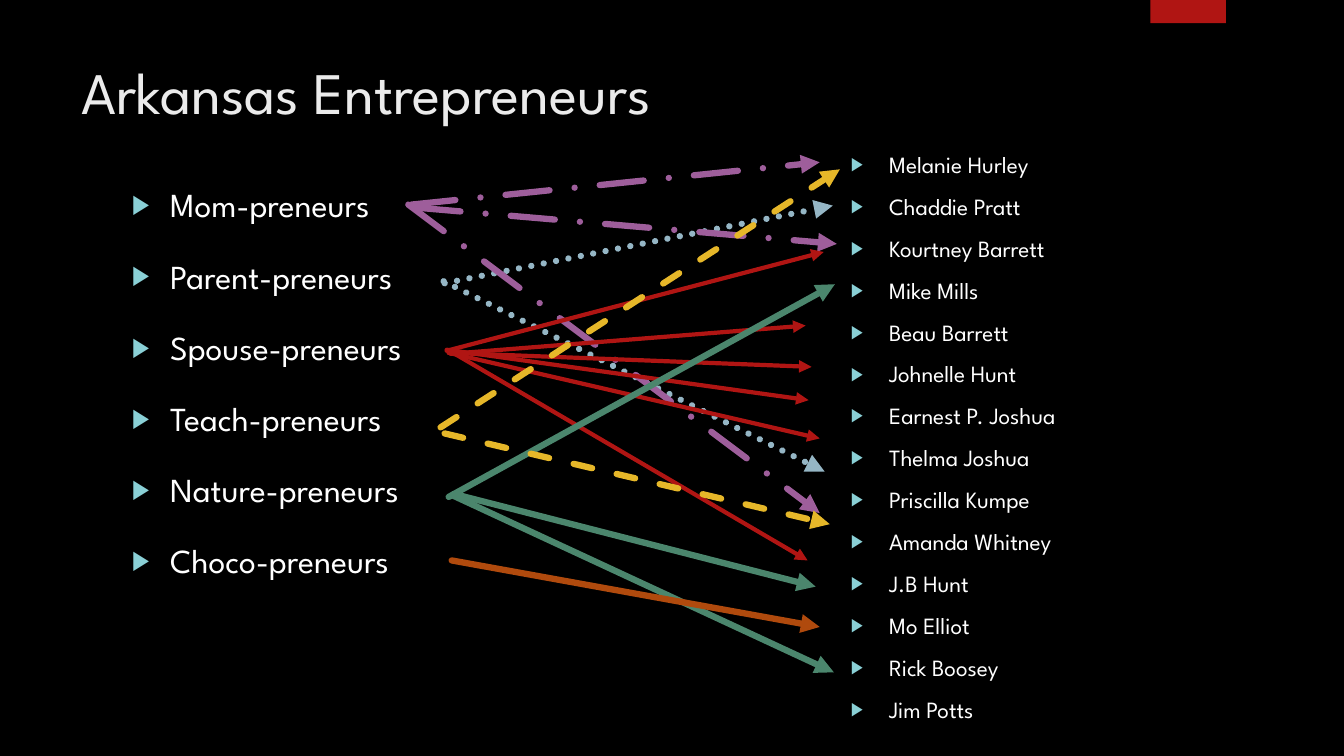
from lxml.etree import SubElement
from pptx import Presentation
from pptx.dml.color import RGBColor
from pptx.enum.dml import MSO_LINE
from pptx.enum.shapes import MSO_CONNECTOR, MSO_SHAPE
from pptx.oxml.ns import qn
from pptx.util import Inches, Pt

TITLE = "Arkansas Entrepreneurs"
KINDS = ["Mom-preneurs", "Parent-preneurs", "Spouse-preneurs",
         "Teach-preneurs", "Nature-preneurs", "Choco-preneurs"]
PEOPLE = ["Melanie Hurley", "Chaddie Pratt", "Kourtney Barrett", "Mike Mills",
          "Beau Barrett", "Johnelle Hunt", "Earnest P. Joshua",
          "Thelma Joshua", "Priscilla Kumpe", "Amanda Whitney", "J.B Hunt",
          "Mo Elliot", "Rick Boosey", "Jim Potts"]

THEME = {
    "font": "League Spartan", "back": "000000", "tab": "B01513",
    "title": "EBEBEB", "text": "FFFFFF", "bullet": "8AD0D6",
    "title_size": 42, "kind_size": 24, "name_size": 16.6,
    # colour, width, dash
    "parent": ("95B6C5", 4.5, MSO_LINE.ROUND_DOT),
    "mom": ("9E5E9B", 4.5, MSO_LINE.LONG_DASH_DOT),
    "spouse": ("B01513", 3, None),
    "nature": ("4B866D", 4.5, None),
    "choco": ("B04A0D", 4.5, None),
    "teach": ("E6B729", 4.5, MSO_LINE.DASH),
}

# Each arrow: start x, start y, end x, end y
ARROWS = {
    "parent": [(4.4, 2.79, 8.18, 4.68), (4.41, 2.81, 8.26, 2.04)],
    "mom": [(4.08, 2.03, 8.13, 1.61), (4.05, 2.03, 8.13, 5.09),
            (4.13, 2.06, 8.3, 2.42)],
    "spouse": [(4.43, 3.48, 8.17, 2.5), (4.47, 3.51, 7.99, 3.23),
               (4.45, 3.5, 8.05, 3.64), (4.51, 3.51, 8.01, 5.56),
               (4.45, 3.5, 8.13, 4.35), (4.43, 3.47, 8.02, 3.97)],
    "nature": [(4.5, 4.9, 8.09, 5.82), (4.45, 4.93, 8.28, 2.82),
               (4.5, 4.92, 8.27, 6.67)],
    "choco": [(4.48, 5.56, 8.13, 6.22)],
    "teach": [(4.37, 4.24, 8.33, 1.68), (4.41, 4.3, 8.23, 5.2)],
}


def color(name):
    return RGBColor.from_string(THEME[name])


def add_bullet(para):
    props = para._p.get_or_add_pPr()
    props.set("marL", str(Inches(0.38)))
    props.set("indent", str(-Inches(0.38)))
    tint = SubElement(props, qn("a:buClr"))
    SubElement(tint, qn("a:srgbClr"), val=THEME["bullet"])
    SubElement(props, qn("a:buSzPct"), val="80000")
    SubElement(props, qn("a:buFont"), typeface="Arial")
    SubElement(props, qn("a:buChar"), char="▶")


def add_text(slide, box, lines, size, tint, bullet=False, before=0, after=0):
    frame = slide.shapes.add_textbox(*map(Inches, box)).text_frame
    frame.word_wrap = True
    frame.text = "\n".join(lines)
    for i, para in enumerate(frame.paragraphs):
        if bullet:
            add_bullet(para)
        para.space_before = Pt(before if i else 0)
        para.space_after = Pt(after)
        font = para.runs[0].font
        font.name = THEME["font"]
        font.size = Pt(THEME[size])
        font.color.rgb = color(tint)


def add_arrow(slide, ends, style):
    tint, width, dash = THEME[style]
    arrow = slide.shapes.add_connector(MSO_CONNECTOR.STRAIGHT,
                                       *map(Inches, ends))
    line = arrow.line
    line.color.rgb = RGBColor.from_string(tint)
    line.width = Pt(width)
    if dash:
        line.dash_style = dash
    props = arrow._element.spPr
    stroke = props.find(qn("a:ln"))
    stroke.set("cap", "rnd")
    SubElement(stroke, qn("a:tailEnd"), type="triangle")
    SubElement(props, qn("a:effectLst"))


def main():
    deck = Presentation()
    deck.slide_width, deck.slide_height = Inches(13.33), Inches(7.5)
    slide = deck.slides.add_slide(deck.slide_layouts[6])
    fill = slide.background.fill
    fill.solid()
    fill.fore_color.rgb = color("back")

    tab = slide.shapes.add_shape(MSO_SHAPE.RECTANGLE, Inches(11.41), 0,
                                 Inches(0.75), Inches(0.23))
    tab.shadow.inherit = False
    tab.fill.solid()
    tab.fill.fore_color.rgb = color("tab")
    tab.line.fill.background()

    add_text(slide, (0.71, 0.5, 10.29, 1.53), [TITLE], "title_size", "title")
    add_text(slide, (1.21, 1.78, 3.52, 3.94), KINDS, "kind_size", "text",
             bullet=True, before=10, after=12)
    add_text(slide, (8.34, 1.44, 3.68, 5.62), PEOPLE, "name_size", "text",
             bullet=True, before=10)
    for style, arrows in ARROWS.items():
        for ends in arrows:
            add_arrow(slide, ends, style)
    deck.save("out.pptx")


if __name__ == "__main__":
    main()
